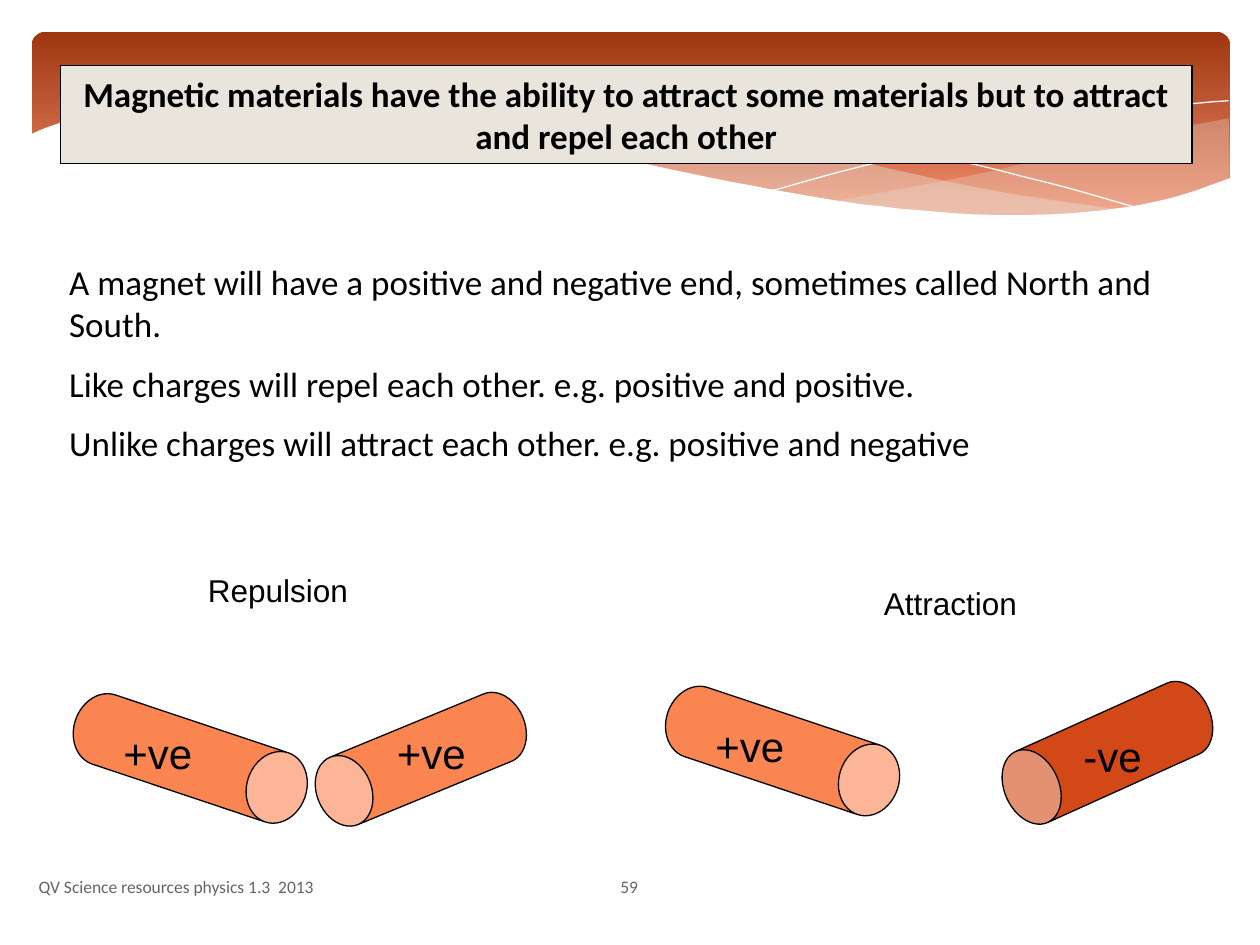
import dataclasses

import lxml.etree
import pptx
import pptx.dml.color
import pptx.enum.shapes
import pptx.enum.text
import pptx.oxml
import pptx.oxml.ns
import pptx.util

Cm = pptx.util.Cm
Pt = pptx.util.Pt
RGB = pptx.dml.color.RGBColor.from_string
ALIGN = pptx.enum.text.PP_ALIGN
ANCHOR = pptx.enum.text.MSO_ANCHOR
SHAPE = pptx.enum.shapes.MSO_SHAPE


@dataclasses.dataclass(frozen=True)
class Theme:
    heading_font: str = "Calibri"
    label_font: str = "Arial"
    black: str = "000000"
    white: str = "FFFFFF"
    grey: str = "696464"
    beige: str = "E9E5DC"
    orange: str = "FA8550"
    red: str = "D34817"
    header_top: str = "9E3611"
    header_bottom: str = "EF8C6A"
    text_size: int = 20
    pole_size: int = 24
    label_size: int = 18
    footer_size: int = 10
    outline: float = 0.75


theme = Theme()


def write(shape, text, font=theme.label_font, size=theme.label_size, color=theme.black,
          bold=False, align=ALIGN.LEFT, anchor=ANCHOR.TOP, gap=0):
    """Fill a shape with text, one paragraph per line."""
    frame = shape.text_frame
    frame.text = text
    frame.word_wrap = True
    frame.auto_size = pptx.enum.text.MSO_AUTO_SIZE.NONE
    frame.vertical_anchor = anchor
    for index, paragraph in enumerate(frame.paragraphs):
        properties = paragraph._p.get_or_add_pPr()
        properties.set("marL", "0")
        properties.set("indent", "0")
        lxml.etree.SubElement(properties, pptx.oxml.ns.qn("a:buNone"))
        paragraph.alignment = align
        paragraph.space_before = Pt(gap if index else 0)
        paragraph.font.name = font
        paragraph.font.size = Pt(size)
        paragraph.font.bold = bold
        paragraph.font.color.rgb = RGB(color)


def smooth(knots, steps=5):
    """Return points on a Catmull-Rom curve through the knots."""
    padded = [knots[0], *knots, knots[-1]]
    points = []
    for a, b, c, d in zip(padded, padded[1:], padded[2:], padded[3:]):
        for t in (step / steps for step in range(steps)):
            points.append(tuple(
                0.5 * (2 * q + (r - p) * t + (2 * p - 5 * q + 4 * r - s) * t ** 2
                       + (3 * q - p - 3 * r + s) * t ** 3)
                for p, q, r, s in zip(a, b, c, d)))
    return points + [knots[-1]]


presentation = pptx.Presentation()
presentation.slide_width = Cm(25.4)
presentation.slide_height = Cm(19.05)
slide = presentation.slides.add_slide(presentation.slide_layouts[1])
shapes = slide.shapes

# Header band
header = shapes.add_shape(SHAPE.ROUNDED_RECTANGLE, Cm(0.64), Cm(0.64), Cm(24.16), Cm(3.96))
header.adjustments[0] = 0.07
header.shadow.inherit = False
header.line.fill.background()
header.fill.gradient()
header.fill.gradient_angle = 270
for stop, color, position in zip(header.fill.gradient_stops,
                                 (theme.header_top, theme.header_bottom), (0, 0.9)):
    stop.color.rgb = RGB(color)
    stop.position = position

# Header waves: edges in cm, fill colour, opacity in percent
waves = [
    ([[(24.77, 2.39), (23.75, 2.57), (22.63, 2.79), (21.13, 3.18), (19.13, 3.63), (16.79, 4.06)],
      [(16.79, 4.06), (17.91, 4.19), (19.23, 4.32), (20.4, 4.37), (21.69, 4.32), (22.99, 4.14),
       (23.93, 3.91), (24.79, 3.58)]], theme.beige, 29),
    ([[(22.68, 4.24), (21.26, 4.04), (19.69, 3.78), (17.93, 3.4), (15.98, 2.95), (14.45, 2.59),
       (13.06, 2.34), (11.81, 2.18), (10.67, 2.08), (9.17, 2.03), (7.95, 2.08), (7.26, 2.18)],
      [(7.26, 2.18), (8.69, 2.39), (10.26, 2.69), (11.4, 2.95), (13.46, 3.43), (15.27, 3.81),
       (16.89, 4.09), (18.34, 4.27), (19.63, 4.37), (20.78, 4.39), (21.77, 4.34),
       (22.68, 4.24)]], theme.beige, 40),
    ([[(7.85, 2.29), (8.97, 2.13), (10.57, 2.06), (12.42, 2.13), (14.12, 2.31), (16.15, 2.62),
       (18.47, 3.05), (21.11, 3.68), (23.04, 4.22)]], None, 100),
    ([[(15.57, 3.84), (17.07, 3.43), (19, 2.97), (21.23, 2.51), (22.73, 2.24), (23.83, 2.11),
       (24.77, 2.03)]], None, 100),
    ([[(24.82, 3.58), (23.62, 3.99), (22.23, 4.24), (20.55, 4.34), (18.9, 4.27), (16.97, 4.06),
       (14.71, 3.66), (12.78, 3.25), (10.62, 2.72), (8.64, 2.34), (6.88, 2.08), (4.9, 1.98),
       (3.35, 2.06), (1.93, 2.26), (1.17, 2.49), (0.58, 2.72)],
      [(0.58, 5.69), (24.82, 5.69)]], theme.white, 100),
]
for edges, color, opacity in waves:
    points = [(round(x * 100), round(y * 100)) for edge in edges for x, y in smooth(edge)]
    builder = shapes.build_freeform(*points[0], scale=Cm(0.01))
    builder.add_line_segments(points[1:], close=color is not None)
    wave = builder.convert_to_shape()
    wave.shadow.inherit = False
    if color is None:
        wave.fill.background()
        wave.line.color.rgb = RGB(theme.white)
        wave.line.width = Pt(0)
        continue
    wave.line.fill.background()
    wave.fill.solid()
    wave.fill.fore_color.rgb = RGB(color)
    if opacity < 100:
        fill_color = wave.element.spPr.find(".//" + pptx.oxml.ns.qn("a:srgbClr"))
        alpha = lxml.etree.SubElement(fill_color, pptx.oxml.ns.qn("a:alpha"))
        alpha.set("val", str(opacity * 1000))

# Footer and slide number
for text, left, width, align in [
    ("QV Science resources physics 1.3  2013", 0.53, 10.52, ALIGN.LEFT),
    ("59", 11.07, 3.23, ALIGN.CENTER),
]:
    footer = shapes.add_textbox(Cm(left), Cm(17.37), Cm(width), Cm(1.02))
    write(footer, text, font=theme.heading_font, size=theme.footer_size, color=theme.grey,
          align=align, anchor=ANCHOR.MIDDLE)

# Body text
body = slide.placeholders[1]
body.left, body.top, body.width, body.height = Cm(1.14), Cm(5.13), Cm(22.86), Cm(4.52)
body.fill.solid()
body.fill.fore_color.rgb = RGB(theme.white)
write(body, "A magnet will have a positive and negative end, sometimes called North and South.\n"
            "Like charges will repel each other. e.g. positive and positive.\n"
            "Unlike charges will attract each other. e.g. positive and negative",
      font=theme.heading_font, size=theme.text_size, gap=theme.text_size / 2)
body.element.getparent().append(body.element)

# Magnets: left, top, width, height, rotation, cap depth, colour
for left, top, width, height, rotation, cap, color in [
    (3.1, 12.85, 1.47, 4.88, 108.5, 0.82, theme.orange),
    (7.75, 13.08, 1.47, 4.45, 247.6, 0.75, theme.orange),
    (15.04, 12.7, 1.47, 4.88, 108.5, 0.82, theme.orange),
    (21.54, 12.95, 1.57, 4.45, 245.7, 0.7, theme.red),
]:
    magnet = shapes.add_shape(SHAPE.CAN, Cm(left), Cm(top), Cm(width), Cm(height))
    magnet.adjustments[0] = cap
    magnet.rotation = rotation
    magnet.shadow.inherit = False
    magnet.fill.solid()
    magnet.fill.fore_color.rgb = RGB(color)
    magnet.line.color.rgb = RGB(theme.black)
    magnet.line.width = Pt(theme.outline)

# Pole signs and captions
for text, left, top, width, height, size in [
    ("+ve", 2.24, 14.55, 2.54, 1.27, theme.pole_size),
    ("+ve", 7.75, 14.55, 2.12, 1.27, theme.pole_size),
    ("+ve", 14.17, 14.4, 2.54, 1.27, theme.pole_size),
    ("-ve", 21.59, 14.6, 2.33, 1.27, theme.pole_size),
    ("Repulsion", 3.94, 11.38, 4.23, 1.02, theme.label_size),
    ("Attraction", 17.57, 11.64, 4.87, 1.02, theme.label_size),
]:
    label = shapes.add_textbox(Cm(left), Cm(top), Cm(width), Cm(height))
    write(label, text, size=size)

# Title
title = shapes.title
title.left, title.top, title.width, title.height = Cm(1.22), Cm(1.32), Cm(22.81), Cm(1.98)
title.fill.solid()
title.fill.fore_color.rgb = RGB(theme.beige)
title.line.color.rgb = RGB(theme.black)
title.line.width = Pt(theme.outline)
write(title, "Magnetic materials have the ability to attract some materials but to attract "
             "and repel each other",
      font=theme.heading_font, size=theme.text_size, bold=True, align=ALIGN.CENTER,
      anchor=ANCHOR.MIDDLE)
title.element.getparent().append(title.element)

presentation.save("out.pptx")
